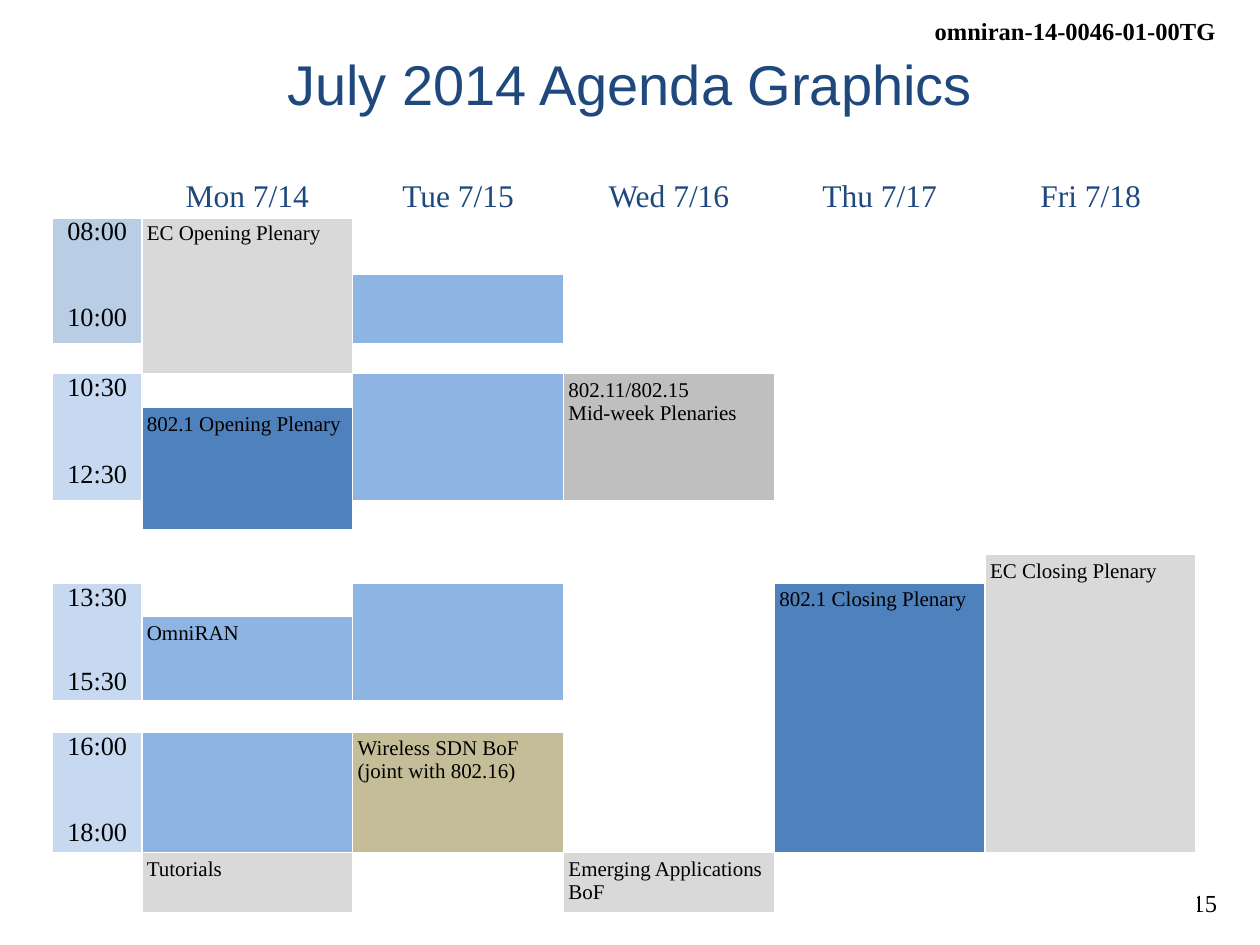
from lxml.etree import SubElement as Sub
from pptx import Presentation
from pptx.dml.color import RGBColor as RGB
from pptx.enum.text import MSO_ANCHOR as Anchor, PP_ALIGN as Align
from pptx.oxml.ns import qn
from pptx.util import Cm, Pt

THEME = {
    "sans": "Arial", "serif": "Times New Roman",
    "black": "000000", "white": "FFFFFF", "navy": "1F497D",
    "time": "C6D9F1", "early": "B9CDE5", "meet": "8EB4E3", "plenary": "4F81BD",
    "ec": "D9D9D9", "midweek": "BFBFBF", "bof": "C4BD97",
    "title": 32, "day": 18, "hour": 15, "note": 14, "item": 12, "blank": 1,
}

DAYS = ["Mon 7/14", "Tue 7/15", "Wed 7/16", "Thu 7/17", "Fri 7/18"]
COLS = [1.8] + [4.25] * len(DAYS)
ROWS = [0.73, 1.16, 1.39, 0.61, 0.68, 1.89, 0.58, 0.5, 0.57, 0.68, 1.65, 0.62, 2.4, 1.13]

# row, rows spanned, fill, start, end, gap between the two in points
SLOTS = [
    (1, 2, "early", "08:00", "10:00", 33),
    (4, 2, "time", "10:30", "12:30", 33),
    (9, 2, "time", "13:30", "15:30", 31.5),
    (12, 1, "time", "16:00", "18:00", 33),
]
# row, column, rows spanned, fill, text
EVENTS = [
    (1, 1, 3, "ec", "EC Opening Plenary"),
    (5, 1, 2, "plenary", "802.1 Opening Plenary"),
    (10, 1, 1, "meet", "OmniRAN"),
    (12, 1, 1, "meet", ""),
    (13, 1, 1, "ec", "Tutorials"),
    (2, 2, 1, "meet", ""),
    (4, 2, 2, "meet", ""),
    (9, 2, 2, "meet", ""),
    (12, 2, 1, "bof", "Wireless SDN BoF\n(joint with 802.16)"),
    (4, 3, 2, "midweek", "802.11/802.15\vMid-week Plenaries"),
    (13, 3, 1, "ec", "Emerging Applications BoF"),
    (9, 4, 4, "plenary", "802.1 Closing Plenary"),
    (8, 5, 5, "ec", "EC Closing Plenary"),
]
# row, column, rows spanned
FREE = [(1, 3, 2), (1, 4, 2), (1, 5, 2), (4, 4, 2), (4, 5, 2), (6, 0, 3),
        (7, 1, 2), (6, 2, 3), (6, 3, 3), (6, 4, 3), (6, 5, 2), (9, 3, 2)]

# text, left, top, width, height, frame format, alignment, font format
LABELS = [
    ("omniran-14-0046-01-00TG", 18.54, 0.2, 6.22, 0.86, {"word_wrap": False},
     Align.RIGHT, {"name": "serif", "size": "note", "color": "black", "bold": True}),
    ("15", 23.7, 17.78, 1.09, 0.86, {"word_wrap": False},
     Align.RIGHT, {"name": "serif", "size": "note", "color": "black"}),
    ("July 2014 Agenda Graphics", 1.27, 0.76, 22.86, 3.18,
     {"word_wrap": True, "margin_top": Cm(0.23)},
     Align.CENTER, {"name": "sans", "size": "title", "color": "navy"}),
]


def apply(obj, form):
    for key, val in form.items():
        setattr(obj, key, val)


def write(frame, text, align, form):
    frame.text = text
    for para in frame.paragraphs:
        para.alignment = align
        for run in para.runs:
            font = run.font
            apply(font, {"name": THEME[form["name"]], "size": Pt(THEME[form["size"]]),
                         "bold": form.get("bold", False)})
            font.color.rgb = RGB.from_string(THEME[form["color"]])


def margins(cell, size):
    sides = ("left", "right", "top", "bottom")
    apply(cell, {f"margin_{side}": Cm(size) for side in sides})


def paint(cell, fill):
    cell.fill.solid()
    cell.fill.fore_color.rgb = RGB.from_string(THEME[fill])


def frame_cell(cell, row):
    """Draw white cell borders, heavier between the header and the grid."""
    props = cell._tc.get_or_add_tcPr()
    for side in "LRTB":
        heavy = (row, side) in ((0, "B"), (1, "T"))
        line = Sub(props, qn(f"a:ln{side}"), w=str(Pt(3 if heavy else 1)))
        Sub(Sub(line, qn("a:solidFill")), qn("a:srgbClr"), val=THEME["white"])


def blank(cell):
    """Shrink the empty paragraph so that it cannot stretch its row."""
    para = cell.text_frame.paragraphs[0]
    Sub(para._p, qn("a:endParaRPr"), sz=str(THEME["blank"] * 100))


def join(grid, row, col, span):
    cell = grid.cell(row, col)
    if span > 1:
        cell.merge(grid.cell(row + span - 1, col))
    return cell


def add_grid(slide):
    shape = slide.shapes.add_table(len(ROWS), len(COLS), Cm(1.06), Cm(3.61),
                                   Cm(sum(COLS)), Cm(sum(ROWS)))
    grid = shape.table
    apply(grid, {"first_row": False, "horz_banding": False})
    for col, width in zip(grid.columns, COLS):
        col.width = Cm(width)
    for row, height in zip(grid.rows, ROWS):
        row.height = Cm(height)
    for row in range(len(ROWS)):
        for col in range(len(COLS)):
            cell = grid.cell(row, col)
            margins(cell, 0)
            frame_cell(cell, row)
            paint(cell, "white")

    day_font = {"name": "serif", "size": "day", "color": "navy"}
    for col, day in enumerate(DAYS, 1):
        write(grid.cell(0, col).text_frame, day, Align.CENTER, day_font)
    hour_font = {"name": "serif", "size": "hour", "color": "black"}
    for row, span, fill, start, end, gap in SLOTS:
        cell = join(grid, row, 0, span)
        paint(cell, fill)
        write(cell.text_frame, f"{start}\n{end}", Align.CENTER, hour_font)
        cell.text_frame.paragraphs[1].space_before = Pt(gap)
    item_font = {"name": "serif", "size": "item", "color": "black"}
    for row, col, span, fill, text in EVENTS:
        cell = join(grid, row, col, span)
        paint(cell, fill)
        if text:
            margins(cell, 0.1)
            write(cell.text_frame, text, Align.LEFT, item_font)
    for spot in FREE:
        join(grid, *spot)
    for cell in grid.iter_cells():
        if not cell.text_frame.text:
            blank(cell)


def main():
    deck = Presentation()
    apply(deck, {"slide_width": Cm(25.4), "slide_height": Cm(19.05)})
    slide = deck.slides.add_slide(deck.slide_layouts[6])
    for text, left, top, width, height, form, align, font in LABELS:
        box = slide.shapes.add_textbox(Cm(left), Cm(top), Cm(width), Cm(height))
        apply(box.text_frame, form)
        write(box.text_frame, text, align, font)
    add_grid(slide)
    deck.save("out.pptx")


if __name__ == "__main__":
    main()
